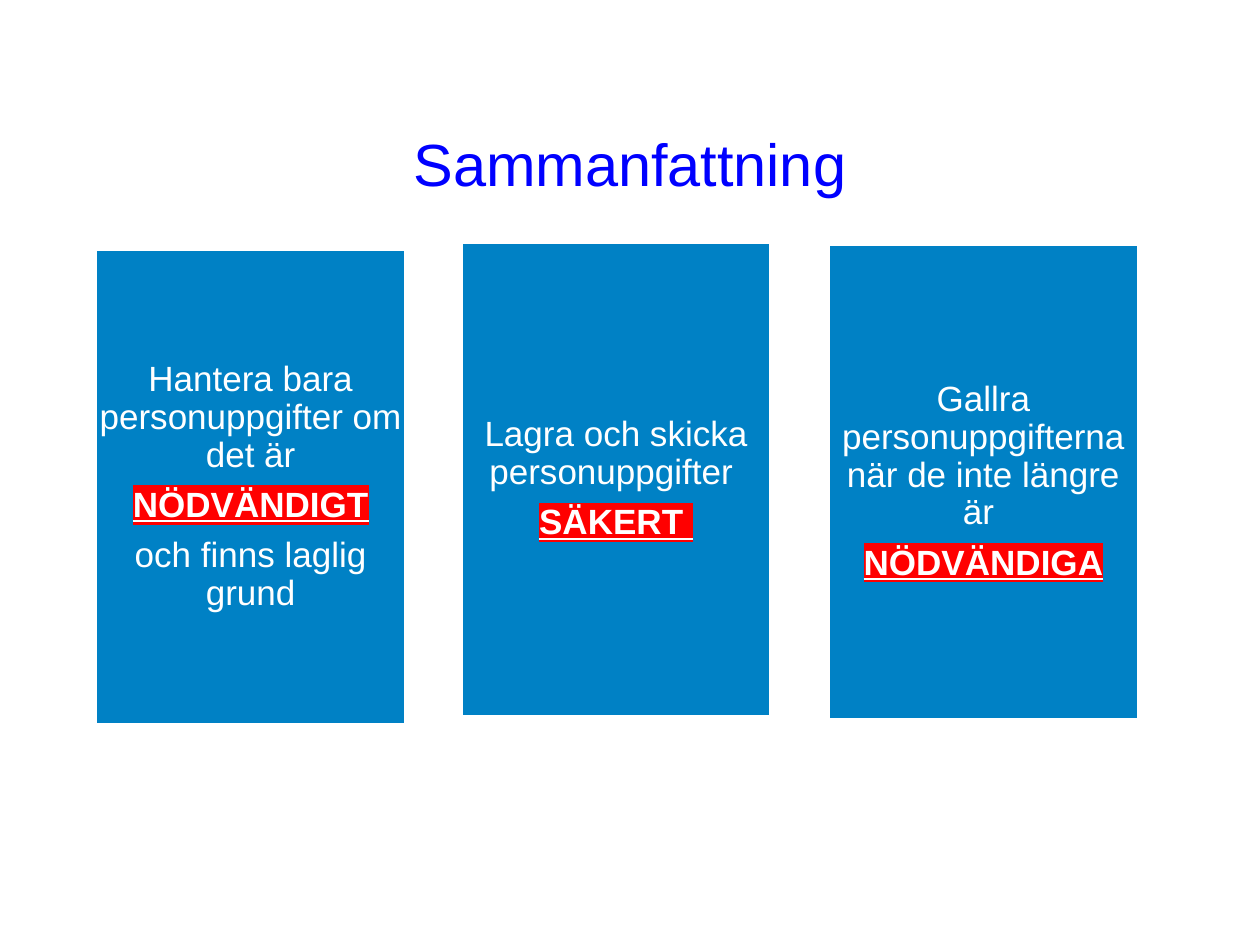
import pptx
import pptx.dml.color
import pptx.enum.shapes
import pptx.enum.text
import pptx.oxml.ns
import pptx.util
from lxml import etree

Inches = pptx.util.Inches
Pt = pptx.util.Pt
ALIGN = pptx.enum.text.PP_ALIGN
MIDDLE = pptx.enum.text.MSO_ANCHOR.MIDDLE

# Content: left, top, width of each card, then (text, marked) paragraphs
TITLE = "Sammanfattning"
CARDS = [
    (0.76, 1.98, 2.46, [
        ("Hantera bara personuppgifter om det är", False),
        ("NÖDVÄNDIGT", True),
        ("och finns laglig grund", False),
    ]),
    (3.66, 1.92, 2.46, [
        ("Lagra och skicka personuppgifter ", False),
        ("SÄKERT ", True),
    ]),
    (6.57, 1.94, 2.47, [
        ("Gallra personuppgifterna när de inte längre är ", False),
        ("NÖDVÄNDIGA", True),
    ]),
]
TALL = 3.77
INSET = 0.01
FONT = "Arial"
COLORS = {"title": "0000FF", "card": "0081C5", "text": "FFFFFF", "mark": "FF0000"}


def color(name):
    return pptx.dml.color.RGBColor.from_string(COLORS[name])


def style(run, size, name):
    run.font.size = Pt(size)
    run.font.color.rgb = color(name)
    run.font.name = FONT


def mark(run):
    """Bold, underlined, on a red highlight."""
    run.font.bold = True
    run.font.underline = True
    qn = pptx.oxml.ns.qn
    light = etree.Element(qn("a:highlight"))
    etree.SubElement(light, qn("a:srgbClr"), val=COLORS["mark"])
    # The highlight belongs right after the text fill
    run.font._element.find(qn("a:solidFill")).addnext(light)


def add_card(slide, left, top, width, lines):
    card = slide.shapes.add_shape(
        pptx.enum.shapes.MSO_SHAPE.RECTANGLE,
        Inches(left), Inches(top), Inches(width), Inches(TALL))
    card.shadow.inherit = False
    card.fill.solid()
    card.fill.fore_color.rgb = color("card")
    card.line.color.rgb = color("text")
    card.line.width = Pt(2)

    frame = card.text_frame
    frame.word_wrap = True
    frame.vertical_anchor = MIDDLE
    frame.margin_left = frame.margin_right = Inches(INSET)
    frame.margin_top = frame.margin_bottom = Inches(INSET)
    frame.text = "\n".join(text for text, _ in lines)
    for para, (_, marked) in zip(frame.paragraphs, lines):
        para.alignment = ALIGN.CENTER
        para.line_spacing = 0.9
        para.space_after = Pt(7)
        run = para.runs[0]
        style(run, 20, "text")
        if marked:
            mark(run)


def main():
    deck = pptx.Presentation()
    deck.slide_width, deck.slide_height = Inches(10), Inches(7.5)
    slide = deck.slides.add_slide(deck.slide_layouts[5])

    # Title
    title = slide.shapes.title
    title.left, title.top = Inches(0.75), Inches(0.67)
    title.width, title.height = Inches(8.5), Inches(1.25)
    title.text_frame.text = TITLE
    title.text_frame.vertical_anchor = MIDDLE
    para = title.text_frame.paragraphs[0]
    para.alignment = ALIGN.CENTER
    style(para.runs[0], 34, "title")

    # Cards
    for card in CARDS:
        add_card(slide, *card)

    deck.save("out.pptx")


if __name__ == "__main__":
    main()
